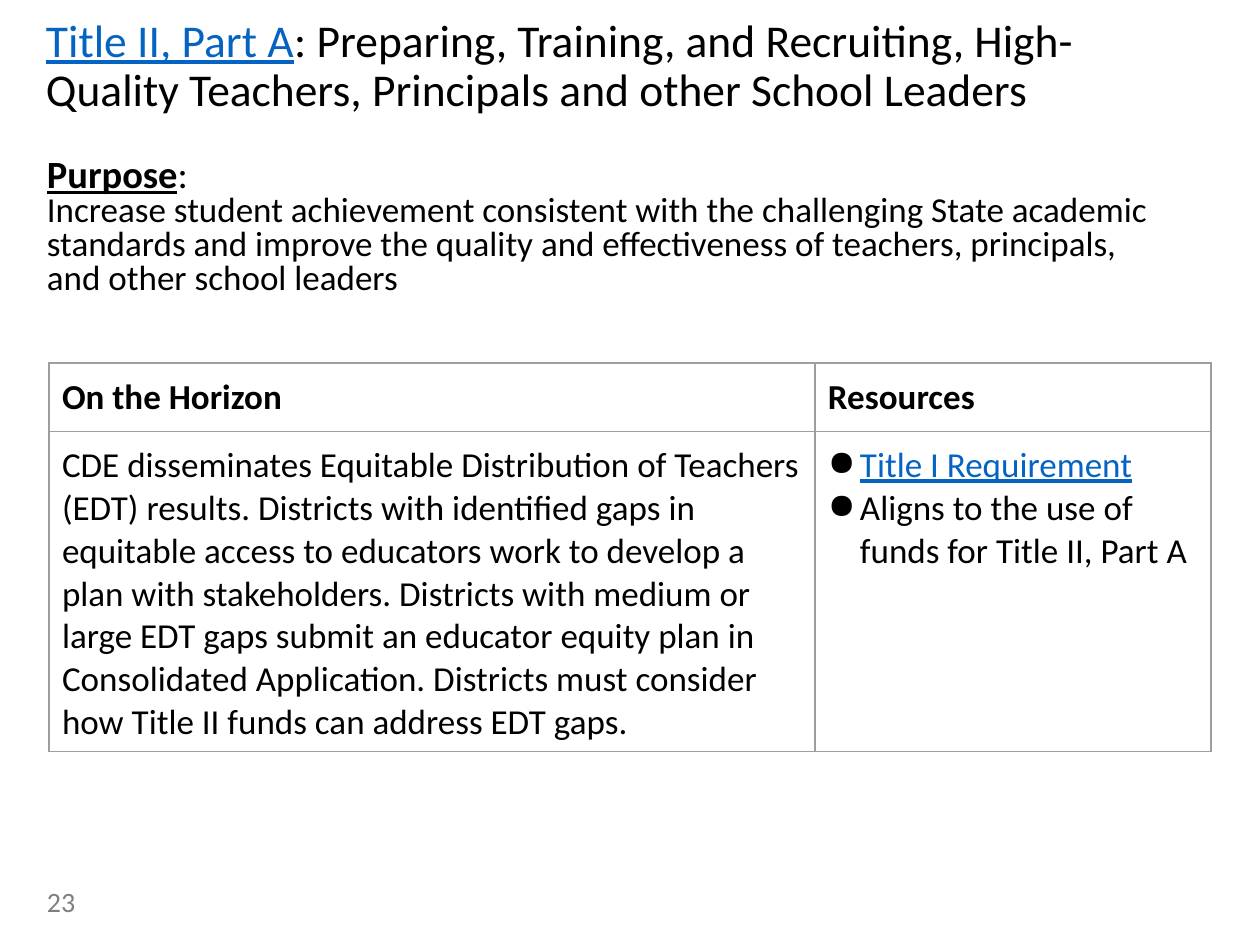
from lxml.etree import SubElement
from pptx import Presentation
from pptx.dml.color import RGBColor
from pptx.enum.text import MSO_ANCHOR, MSO_AUTO_SIZE, PP_ALIGN
from pptx.oxml.ns import qn
from pptx.util import Emu, Pt

COLORS = {"ink": "000000", "link": "0563C1", "muted": "7F7F7F", "border": "9E9E9E"}
FONT = "Calibri"
PX_PER_INCH = 126
CELL_INSET = 13
BULLET_INDENT = 32


def px(length):
    return Emu(round(length * 914400 / PX_PER_INCH))


def place_box(box):
    return [px(length) for length in box]


def add_run(paragraph, text, size, color="ink", bold=False, underline=False):
    run = paragraph.add_run()
    run.text = text
    font = run.font
    font.name, font.size = FONT, Pt(size)
    font.bold, font.underline = bold, underline
    font.color.rgb = RGBColor.from_string(COLORS[color])


def set_insets(frame, horizontal, vertical):
    frame.margin_left = frame.margin_right = px(horizontal)
    frame.margin_top = frame.margin_bottom = px(vertical)


def add_text_frame(slide, box, horizontal, vertical):
    frame = slide.shapes.add_textbox(*place_box(box)).text_frame
    frame.word_wrap = True
    set_insets(frame, horizontal, vertical)
    return frame


def add_solid_color(parent, color):
    fill = SubElement(parent, qn("a:solidFill"))
    SubElement(fill, qn("a:srgbClr"), val=COLORS[color])


def add_bullet(paragraph):
    properties = paragraph._p.get_or_add_pPr()
    properties.set("marL", str(px(BULLET_INDENT)))
    properties.set("indent", str(-px(BULLET_INDENT)))
    bullet_color = SubElement(properties, qn("a:buClr"))
    SubElement(bullet_color, qn("a:srgbClr"), val=COLORS["ink"])
    SubElement(properties, qn("a:buChar"), char="●")


def style_cell(cell):
    set_insets(cell, CELL_INSET, CELL_INSET)
    properties = cell._tc.get_or_add_tcPr()
    for side in ("lnL", "lnR", "lnT", "lnB"):
        line = SubElement(properties, qn(f"a:{side}"), w=str(Pt(0.75)))
        add_solid_color(line, "border")
    cell.fill.background()


def build_title(slide, box):
    title = slide.shapes.title
    title.left, title.top, title.width, title.height = place_box(box)
    frame = title.text_frame
    frame.word_wrap = True
    frame.auto_size = MSO_AUTO_SIZE.NONE
    frame.vertical_anchor = MSO_ANCHOR.TOP
    set_insets(frame, 0, 0)
    heading = frame.paragraphs[0]
    heading.alignment = PP_ALIGN.LEFT
    heading.line_spacing = 0.9
    add_run(heading, "Title II, Part A", 26, "link", underline=True)
    add_run(heading, ": Preparing, Training, and Recruiting, High-Quality Teachers, "
            "Principals and other School Leaders", 26)


def build_purpose(slide, box):
    frame = add_text_frame(slide, box, 13, 13)
    label, statement = frame.paragraphs[0], frame.add_paragraph()
    label.line_spacing = statement.line_spacing = 0.8
    add_run(label, "Purpose", 22, bold=True, underline=True)
    add_run(label, ":", 22)
    add_run(statement, "Increase student achievement consistent with the challenging State "
            "academic standards and improve the quality and effectiveness of teachers, "
            "principals, and other school leaders", 20)


def build_horizon_table(slide, box, column_widths, row_heights):
    frame = slide.shapes.add_table(len(row_heights), len(column_widths), *place_box(box))
    table = frame.table
    table.first_row = table.horz_banding = False
    for column, width in zip(table.columns, column_widths):
        column.width = px(width)
    for row, height in zip(table.rows, row_heights):
        row.height = px(height)
    for cell in table.iter_cells():
        style_cell(cell)

    for index, heading in enumerate(("On the Horizon", "Resources")):
        add_run(table.cell(0, index).text_frame.paragraphs[0], heading, 20, bold=True)

    add_run(table.cell(1, 0).text_frame.paragraphs[0],
            "CDE disseminates Equitable Distribution of Teachers (EDT) results. Districts "
            "with identified gaps in equitable access to educators work to develop a plan "
            "with stakeholders. Districts with medium or large EDT gaps submit an educator "
            "equity plan in Consolidated Application. Districts must consider how Title II "
            "funds can address EDT gaps.", 20)

    resources = table.cell(1, 1).text_frame
    requirement, alignment = resources.paragraphs[0], resources.add_paragraph()
    for item in (requirement, alignment):
        add_bullet(item)
    add_run(requirement, "Title I Requirement", 20, "link", underline=True)
    add_run(alignment, "Aligns to the use of funds for Title II, Part A", 20)


def build_page_number(slide, box):
    frame = add_text_frame(slide, box, 13, 6)
    frame.vertical_anchor = MSO_ANCHOR.MIDDLE
    add_run(frame.paragraphs[0], "23", 16, "muted")


def main():
    deck = Presentation()
    deck.slide_width, deck.slide_height = px(1260), px(945)
    slide = deck.slides.add_slide(deck.slide_layouts[5])
    build_title(slide, (46, 18, 1138, 123))
    build_page_number(slide, (34, 876, 284, 50))
    build_purpose(slide, (34, 146, 1145, 229))
    build_horizon_table(slide, (49, 363, 1162, 386), (766, 396), (67, 319))
    deck.save("out.pptx")


if __name__ == "__main__":
    main()
